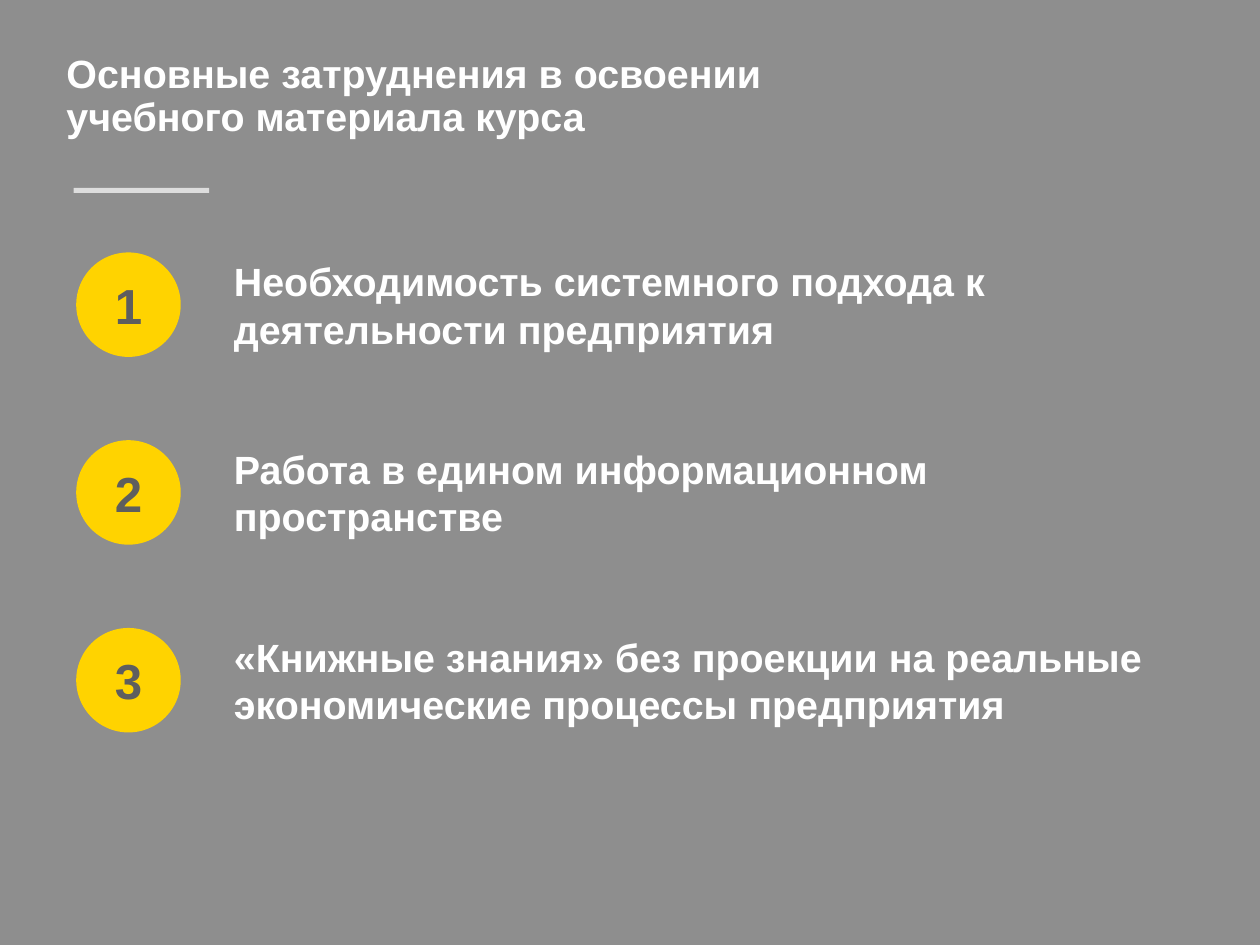
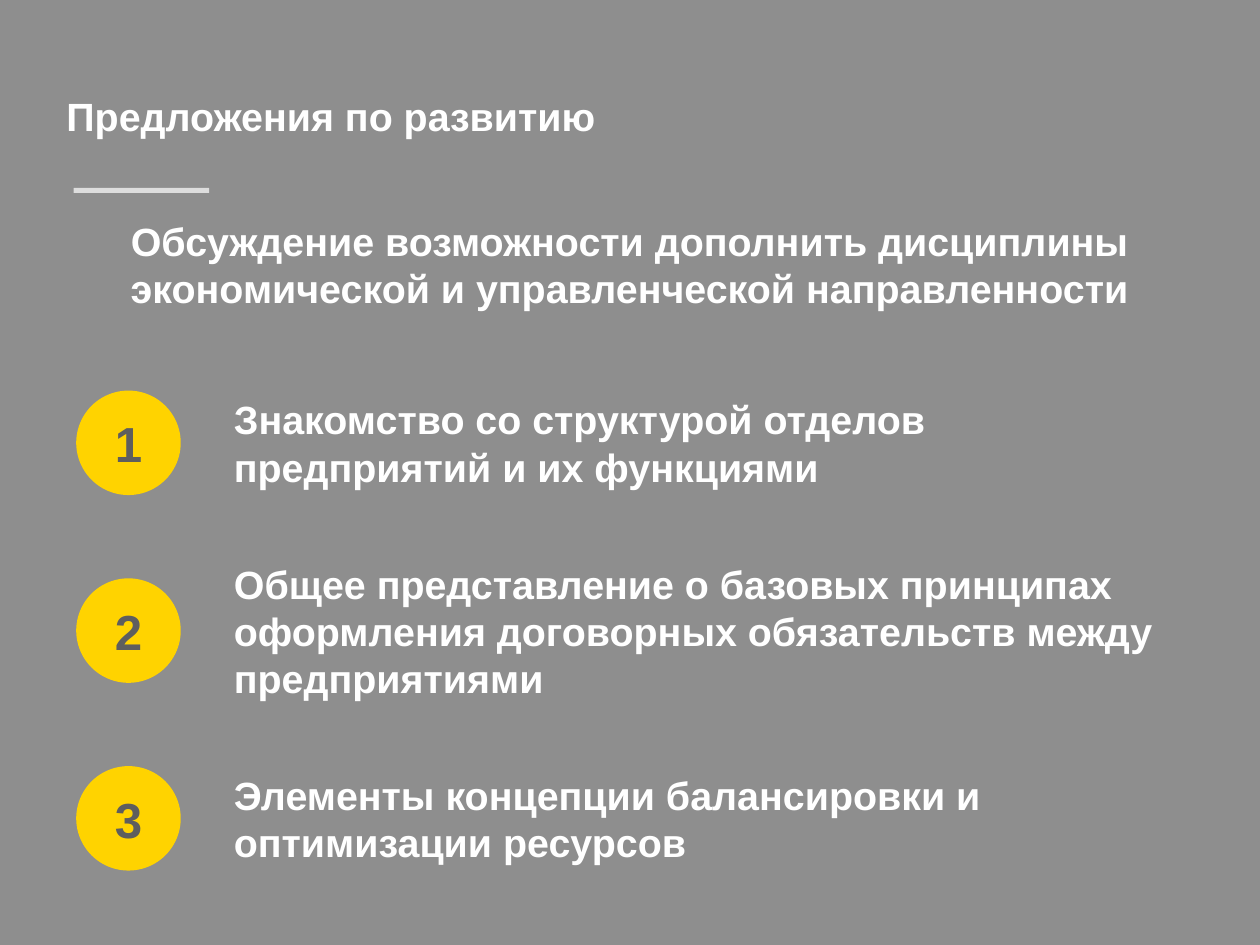
from dataclasses import dataclass

from lxml import etree
from pptx import Presentation
from pptx import util as u
from pptx.dml import color
from pptx.enum import shapes, text
from pptx.oxml import ns


@dataclass(frozen=True)
class Theme:
    font: str = "Arial"
    backdrop: str = "8E8E8E"
    light: str = "FFFFFF"
    badge: str = "FFD300"
    numeral: str = "5E5E5E"
    body_size: int = 32
    numeral_size: int = 40
    rule_width: int = 4
    rule_opacity: int = 70


THEME = Theme()

# Grid, in inches
SLIDE_W, SLIDE_H = 14.22, 10.67
BADGE_X, TEXT_X = 0.86, 2.58
ROW_H, ROW_STEP = 1.18, 2.12
INSET = 0.06


def rgb(code):
    return color.RGBColor.from_string(code)


def inches(*lengths):
    return [u.Inches(length) for length in lengths]


def write(shape, wording, size, ink, anchor, align=text.PP_ALIGN.LEFT, spacing=None):
    """Fill a shape with one bold paragraph."""
    frame = shape.text_frame
    frame.word_wrap = True
    frame.vertical_anchor = anchor
    frame.margin_left = frame.margin_right = u.Inches(INSET)
    frame.margin_top = frame.margin_bottom = u.Inches(INSET)
    paragraph = frame.paragraphs[0]
    paragraph.text = wording
    paragraph.alignment = align
    if spacing:
        paragraph.line_spacing = spacing
    font = paragraph.font
    font.name, font.size, font.bold = THEME.font, u.Pt(size), True
    font.color.rgb = rgb(ink)


def add_text(slide, box, wording, anchor, **style):
    label = slide.shapes.add_textbox(*inches(*box))
    write(label, wording, THEME.body_size, THEME.light, anchor, **style)


def add_rule(slide):
    """Short translucent line under the title."""
    rule = slide.shapes.add_connector(
        shapes.MSO_CONNECTOR.STRAIGHT, *inches(0.83, 2.15, 2.36, 2.15))
    rule.line.width = u.Pt(THEME.rule_width)
    rule.line.color.rgb = rgb(THEME.light)
    properties = rule.element.spPr
    tint = properties.find(".//" + ns.qn("a:srgbClr"))
    etree.SubElement(tint, ns.qn("a:alpha"), val=str(THEME.rule_opacity * 1000))
    etree.SubElement(properties, ns.qn("a:effectLst"))


def add_titled_slide(prs, title):
    slide = prs.slides.add_slide(prs.slide_layouts[6])
    add_rule(slide)
    add_text(slide, (0.69, 0.53, 9.72, 1.11), title,
             text.MSO_ANCHOR.BOTTOM, spacing=0.9)
    return slide


def add_badge(slide, number, top):
    badge = slide.shapes.add_shape(
        shapes.MSO_SHAPE.OVAL, *inches(BADGE_X, top, ROW_H, ROW_H))
    badge.shadow.inherit = False
    badge.fill.solid()
    badge.fill.fore_color.rgb = rgb(THEME.badge)
    badge.line.fill.background()
    write(badge, str(number), THEME.numeral_size, THEME.numeral,
          text.MSO_ANCHOR.MIDDLE, text.PP_ALIGN.CENTER)


def add_numbered_list(slide, first_top, points):
    """Points are pairs of wording and text width."""
    for index, (wording, width) in enumerate(points):
        top = first_top + index * ROW_STEP
        add_badge(slide, index + 1, top)
        add_text(slide, (TEXT_X, top, width, ROW_H), wording, text.MSO_ANCHOR.MIDDLE)


def main():
    prs = Presentation()
    prs.slide_width, prs.slide_height = inches(SLIDE_W, SLIDE_H)

    # Shared backdrop
    backdrop = prs.slide_master.background.fill
    backdrop.solid()
    backdrop.fore_color.rgb = rgb(THEME.backdrop)

    # Difficulties
    difficulties = add_titled_slide(
        prs, "Основные затруднения в освоении учебного материала курса")
    add_numbered_list(difficulties, 2.85, [
        ("Необходимость системного подхода к деятельности предприятия", 9.04),
        ("Работа в едином информационном пространстве", 10.54),
        ("«Книжные знания» без проекции на реальные экономические процессы предприятия",
         SLIDE_W - TEXT_X),
    ])

    # Proposals
    proposals = add_titled_slide(prs, "Предложения по развитию")
    add_numbered_list(proposals, 4.41, [
        ("Знакомство со структурой отделов предприятий и их функциями", 9.04),
        ("Общее представление о базовых принципах оформления договорных "
         "обязательств между предприятиями", 10.54),
        ("Элементы концепции балансировки и оптимизации ресурсов", 9.96),
    ])
    add_text(proposals, (0, 2.39, SLIDE_W, 1.27),
             "Обсуждение возможности дополнить дисциплины экономической "
             "и управленческой направленности",
             text.MSO_ANCHOR.TOP, align=text.PP_ALIGN.CENTER)

    prs.save("out.pptx")


if __name__ == "__main__":
    main()
